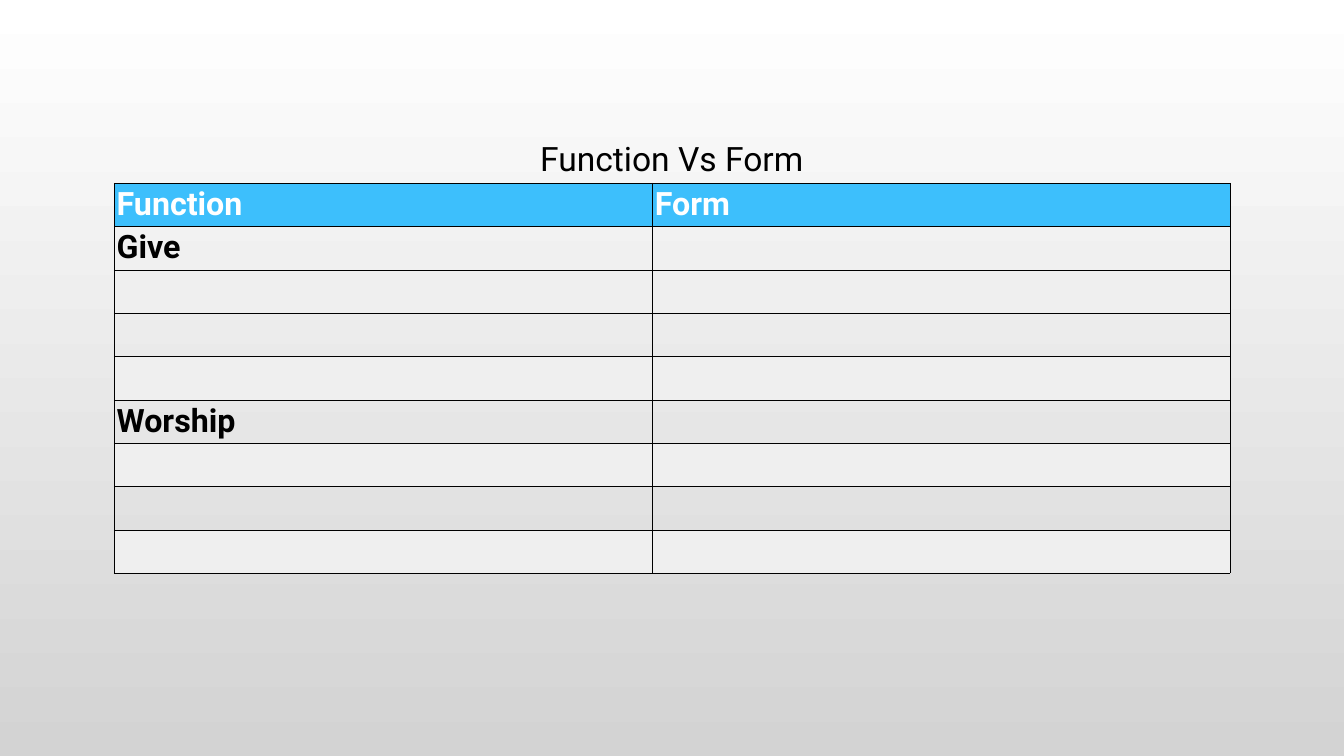
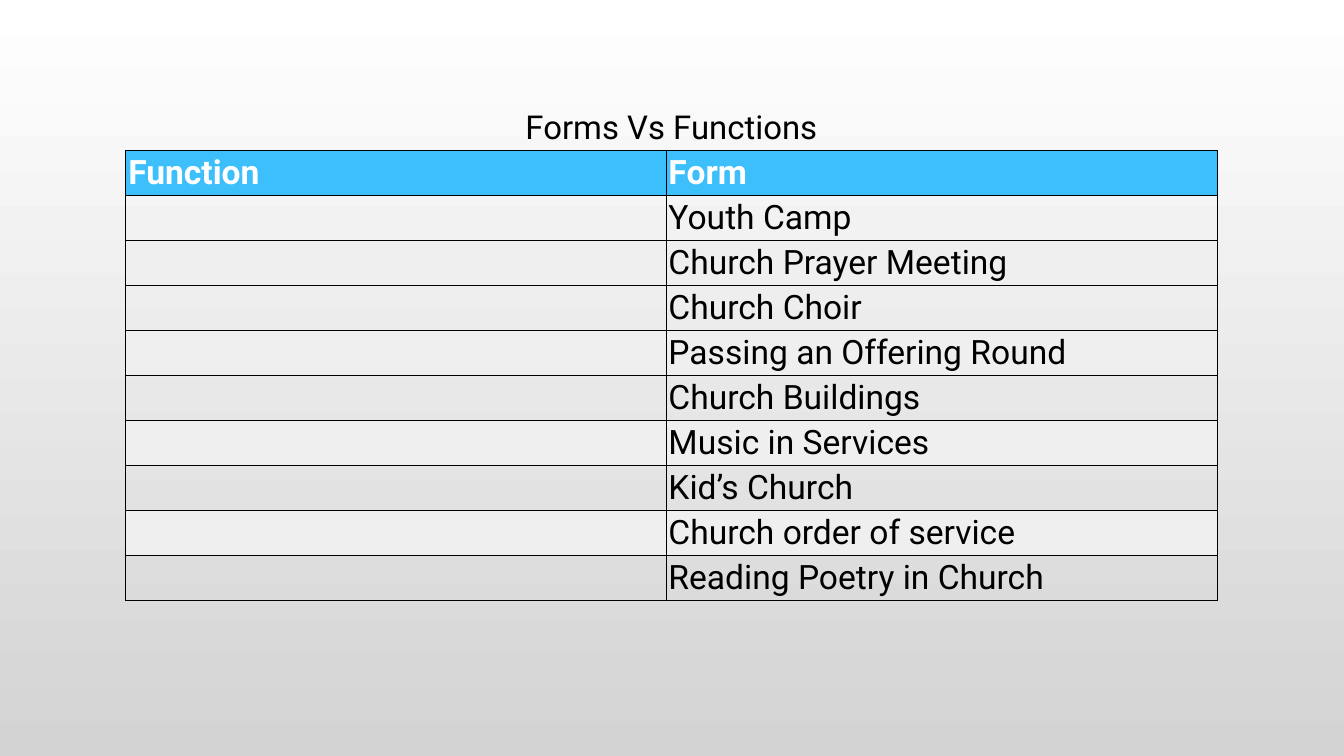
from lxml.etree import SubElement
from pptx import Presentation
from pptx.dml.color import RGBColor
from pptx.enum.text import MSO_ANCHOR as Anchor, PP_ALIGN as Align
from pptx.oxml.ns import qn
from pptx.util import Inches, Pt

WIDE, HIGH = 26.67, 15
FONT = "Roboto"
BLACK, WHITE, BLUE, BAND = "000000", "FFFFFF", "3DBFFC", "EFEFEF"
FADE = (WHITE, "D3D3D3")
HEAD = ("Function", "Form")
INSET = Pt(4)

SLIDES = [
    {
        "title": "Function Vs Form", "title_size": 48, "size": 46, "bold": True,
        "at": (2.26, 2.71), "cols": (10.68, 11.46), "rows": (0.92, 0.86),
        "body": [(name, "") for name in
                 ("Give", "", "", "", "Worship", "", "", "")],
    },
    {
        "title": "Forms Vs Functions", "title_size": 47, "size": 48, "bold": False,
        "at": (2.49, 2.09), "cols": (10.72, 10.95), "rows": (0.89, 0.89),
        "body": [("", form) for form in (
            "Youth Camp", "Church Prayer Meeting", "Church Choir",
            "Passing an Offering Round", "Church Buildings", "Music in Services",
            "Kid’s Church", "Church order of service", "Reading Poetry in Church")],
    },
]


def rgb(code):
    return RGBColor.from_string(code)


def edge(cell, sides, width=0.25):
    """Rule the named sides of a cell and clear the others."""
    props = cell._tc.get_or_add_tcPr()
    for spot, side in enumerate("LRTB"):
        line = SubElement(props, qn(f"a:ln{side}"), w=str(Pt(width)))
        if side in sides:
            fill = SubElement(line, qn("a:solidFill"))
            SubElement(fill, qn("a:srgbClr"), val=BLACK)
        else:
            SubElement(line, qn("a:noFill"))
        props.insert(spot, line)


def paint(cell, code):
    if code:
        cell.fill.solid()
        cell.fill.fore_color.rgb = rgb(code)
    else:
        cell.fill.background()


def write(cell, text, size, color=BLACK, bold=False, align=Align.LEFT):
    for side in ("left", "right", "top", "bottom"):
        setattr(cell, f"margin_{side}", INSET)
    if not text:
        return
    para = cell.text_frame.paragraphs[0]
    para.alignment = align
    run = para.add_run()
    run.text = text
    for key, value in {"name": FONT, "size": Pt(size), "bold": bold}.items():
        setattr(run.font, key, value)
    run.font.color.rgb = rgb(color)


def add_grid(slide, data):
    lines = [HEAD] + data["body"]
    first, rest = data["rows"]
    heights = [first] + [rest] * len(lines)
    box = (*data["at"], sum(data["cols"]), sum(heights))
    frame = slide.shapes.add_table(len(heights), len(HEAD), *map(Inches, box))
    table = frame.table
    table.first_row = table.horz_banding = False
    for col, width in zip(table.columns, data["cols"]):
        col.width = Inches(width)
    for row, height in zip(table.rows, heights):
        row.height = Inches(height)

    title = table.cell(0, 0)
    title.merge(table.cell(0, len(HEAD) - 1))
    title.vertical_anchor = Anchor.MIDDLE
    write(title, data["title"], data["title_size"], align=Align.CENTER)
    for cell in table.rows[0].cells:
        paint(cell, None)
        edge(cell, "B")

    for r, line in enumerate(lines):
        fill = BLUE if r == 0 else BAND if r % 2 == 0 else None
        color, bold = (WHITE, True) if r == 0 else (BLACK, data["bold"])
        for c, text in enumerate(line):
            cell = table.cell(r + 1, c)
            write(cell, text, data["size"], color, bold)
            paint(cell, fill)
            edge(cell, "LRTB")


def main():
    prs = Presentation()
    prs.slide_width, prs.slide_height = Inches(WIDE), Inches(HIGH)
    back = prs.slide_master.background.fill
    back.gradient()
    back.gradient_angle = 270
    for stop, code in zip(back.gradient_stops, FADE):
        stop.color.rgb = rgb(code)
    for data in SLIDES:
        add_grid(prs.slides.add_slide(prs.slide_layouts[6]), data)
    prs.save("out.pptx")


if __name__ == "__main__":
    main()
